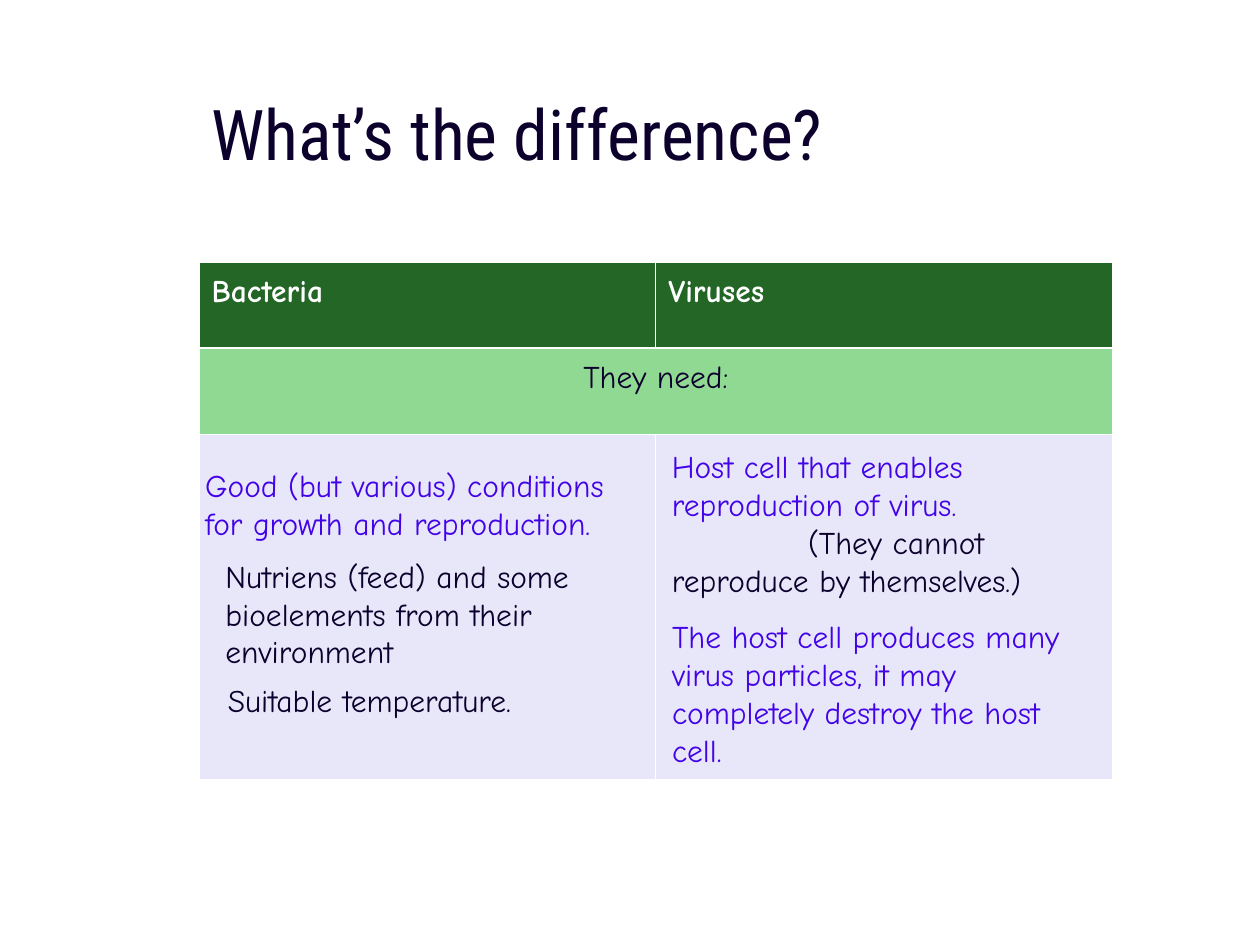
from lxml import etree
from pptx import Presentation
from pptx import util as u
from pptx.dml.color import RGBColor
from pptx.enum import text
from pptx.oxml.ns import qn

HUES = {"ink": "0C002C", "violet": "4203E7", "white": "FFFFFF",
        "head": "236626", "band": "90D993", "body": "E8E7FA"}
HEAD, BODY = "Roboto Condensed", "Comic Neue"
WIDE, HIGH = 10, 7.5
GRID = (1.58, 2.08, 7.25, 4.11)  # table box: left, top, width, height
ROWS = (1 / 6, 1 / 6, 2 / 3)     # row shares of the table height
THIN, THICK = 0.45, 1.47         # rule widths in points


def add_run(par, words, hue, size=18, font=BODY, bold=False):
    run = par.add_run()
    run.text = words
    run.font.size, run.font.name, run.font.bold = u.Pt(size), font, bold
    run.font.color.rgb = RGBColor.from_string(HUES[hue])


def set_box(shape, box):
    shape.left, shape.top, shape.width, shape.height = map(u.Inches, box)


def add_title(slide, box, words):
    title = slide.shapes.title
    set_box(title, box)
    frame = title.text_frame
    frame.word_wrap = True
    frame.auto_size = text.MSO_AUTO_SIZE.NONE
    frame.vertical_anchor = text.MSO_ANCHOR.TOP
    par = frame.paragraphs[0]
    par.alignment = text.PP_ALIGN.LEFT
    add_run(par, words, "ink", 40, HEAD)


def rule_cell(cell, row):
    """White rules on all sides, thick between header and band."""
    props = cell._tc.get_or_add_tcPr()
    wide = {"lnL": THIN, "lnR": THIN,
            "lnT": THICK if row == 1 else THIN,
            "lnB": THICK if row == 0 else THIN}
    for side, size in wide.items():
        line = etree.SubElement(props, qn("a:" + side), w=str(u.Pt(size)))
        fill = etree.SubElement(line, qn("a:solidFill"))
        etree.SubElement(fill, qn("a:srgbClr"), val=HUES["white"])


def fill_cell(cell, words, hue, bold, align):
    par = cell.text_frame.paragraphs[0]
    par.line_spacing, par.alignment = 1.16, align
    add_run(par, words, hue, bold=bold)


def add_grid(slide, box):
    table = slide.shapes.add_table(3, 2, *map(u.Inches, box)).table
    for col in table.columns:
        col.width = u.Inches(box[2] / 2)
    for r, (share, hue) in enumerate(zip(ROWS, ("head", "band", "body"))):
        table.rows[r].height = u.Inches(box[3] * share)
        for c in range(2):
            cell = table.cell(r, c)
            rule_cell(cell, r)
            cell.fill.solid()
            cell.fill.fore_color.rgb = RGBColor.from_string(HUES[hue])
    for c, words in enumerate(("Bacteria", "Viruses")):
        fill_cell(table.cell(0, c), words, "white", True, text.PP_ALIGN.LEFT)
    table.cell(1, 0).merge(table.cell(1, 1))
    fill_cell(table.cell(1, 0), "They need:", "ink", False,
              text.PP_ALIGN.CENTER)


def add_note(slide, box, *parts, wrap=True):
    """Each part is (words, hue, first-line indent in inches)."""
    frame = slide.shapes.add_textbox(*map(u.Inches, box)).text_frame
    frame.word_wrap = wrap
    for i, (words, hue, dent) in enumerate(parts):
        par = frame.add_paragraph() if i else frame.paragraphs[0]
        if dent:
            props = par._p.get_or_add_pPr()
            props.set("marL", "0")
            props.set("indent", str(u.Inches(dent)))
        add_run(par, words, hue)


def add_needs(slide, box):
    """Notes over the last table row, one column for each microbe."""
    left, top, wide, high = box
    mid = left + wide / 2 + 0.03
    add_note(slide, (left - 0.05, top + 0.2, wide * 0.51, 0.7),
             ("Good (but various) conditions for growth and reproduction.",
              "violet", 0))
    add_note(slide, (left + 0.11, top + 0.92, wide * 0.46, 1),
             ("Nutriens (feed) and some bioelements from their environment",
              "ink", 0))
    add_note(slide, (left + 0.13, top + 1.91, wide * 0.38, 0.7),
             ("Suitable temperature.", "ink", 0), wrap=False)
    add_note(slide, (mid, top + 0.05, wide / 2, 1.3),
             ("Host cell that enables reproduction of virus.", "violet", 0),
             ("(They cannot reproduce by themselves.)", "ink", 1.08))
    add_note(slide, (mid, top + 1.4, wide * 0.48, 1.3),
             ("The host cell produces many virus particles, "
              "it may completely destroy the host cell.", "violet", 0))


def main():
    deck = Presentation()
    deck.slide_width, deck.slide_height = u.Inches(WIDE), u.Inches(HIGH)
    slide = deck.slides.add_slide(deck.slide_layouts[5])
    left, top, wide, high = GRID
    add_title(slide, (left, 0.67, wide, HIGH / 6), "What’s the difference?")
    add_grid(slide, GRID)
    add_needs(slide, (left, top + high / 3, wide, high * ROWS[2]))
    deck.save("out.pptx")


if __name__ == "__main__":
    main()
